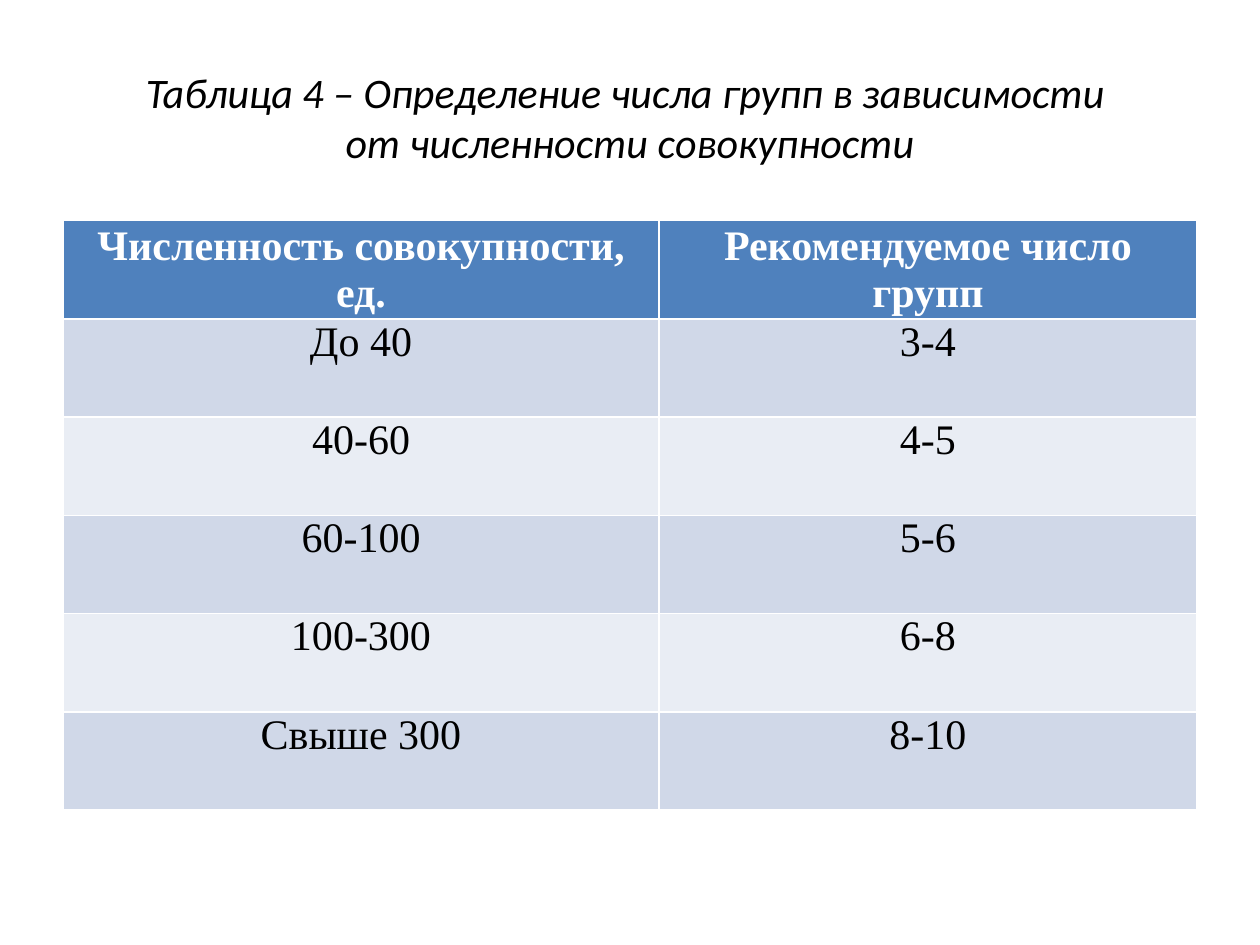
"""Build a slide with a table of recommended group counts by population size."""
from typing import NamedTuple

from pptx import Presentation
from pptx.dml.color import RGBColor
from pptx.enum.text import MSO_ANCHOR, PP_ALIGN
from pptx.util import Inches, Pt

CENTER = PP_ALIGN.CENTER
MIDDLE = MSO_ANCHOR.MIDDLE
TOP = MSO_ANCHOR.TOP

BLACK = RGBColor(0x00, 0x00, 0x00)
WHITE = RGBColor(0xFF, 0xFF, 0xFF)
HEADER_BLUE = RGBColor(0x4F, 0x81, 0xBD)
BAND_DARK = RGBColor(0xD0, 0xD8, 0xE8)
BAND_LIGHT = RGBColor(0xE9, 0xED, 0xF4)

TEXT_SIZE = Pt(24)
COLUMN_WIDTHS = (4.73, 4.27)
ROW_HEIGHT = 0.78


class Grouping(NamedTuple):
    population: str
    groups: str


class RowStyle(NamedTuple):
    fill: RGBColor
    color: RGBColor
    bold: bool
    anchor: MSO_ANCHOR


HEADER = RowStyle(HEADER_BLUE, WHITE, True, MIDDLE)
BANDS = (
    RowStyle(BAND_DARK, BLACK, False, TOP),
    RowStyle(BAND_LIGHT, BLACK, False, TOP),
)

GROUPINGS = (
    Grouping("Численность совокупности, ед.", "Рекомендуемое число групп"),
    Grouping("До 40", "3-4"),
    Grouping("40-60", "4-5"),
    Grouping("60-100", "5-6"),
    Grouping("100-300", "6-8"),
    Grouping("Свыше 300", "8-10"),
)


def format_text(frame, font_name: str, color: RGBColor, bold: bool = False, italic: bool = False) -> None:
    for paragraph in frame.paragraphs:
        paragraph.alignment = CENTER
        for run in paragraph.runs:
            run.font.name = font_name
            run.font.size = TEXT_SIZE
            run.font.color.rgb = color
            run.font.bold = bold
            run.font.italic = italic


def fill_cell(cell, text: str, style: RowStyle) -> None:
    cell.margin_left = cell.margin_right = Inches(0.07)
    cell.margin_top = cell.margin_bottom = 0
    cell.vertical_anchor = style.anchor
    cell.fill.solid()
    cell.fill.fore_color.rgb = style.fill
    cell.text_frame.text = text
    format_text(cell.text_frame, "Times New Roman", style.color, bold=style.bold)


def add_title(slide) -> None:
    title = slide.shapes.title
    title.left, title.top = Inches(0.5), Inches(0.3)
    title.width, title.height = Inches(9), Inches(1.25)
    title.text_frame.text = (
        "Таблица 4 – Определение числа групп в зависимости \v"
        "от численности совокупности"
    )
    title.text_frame.vertical_anchor = MIDDLE
    format_text(title.text_frame, "Calibri", BLACK, italic=True)


def add_groupings(slide) -> None:
    table = slide.shapes.add_table(
        len(GROUPINGS), len(COLUMN_WIDTHS), Inches(0.5), Inches(1.75),
        Inches(sum(COLUMN_WIDTHS)), Inches(ROW_HEIGHT * len(GROUPINGS)),
    ).table
    for column, width in zip(table.columns, COLUMN_WIDTHS):
        column.width = Inches(width)
    for index, (row, grouping) in enumerate(zip(table.rows, GROUPINGS)):
        row.height = Inches(ROW_HEIGHT)
        style = BANDS[(index - 1) % 2] if index else HEADER
        for cell, text in zip(row.cells, grouping):
            fill_cell(cell, text, style)


def main() -> None:
    presentation = Presentation()
    presentation.slide_width = Inches(10)
    presentation.slide_height = Inches(7.5)
    slide = presentation.slides.add_slide(presentation.slide_layouts[5])
    add_title(slide)
    add_groupings(slide)
    presentation.save("out.pptx")


if __name__ == "__main__":
    main()
